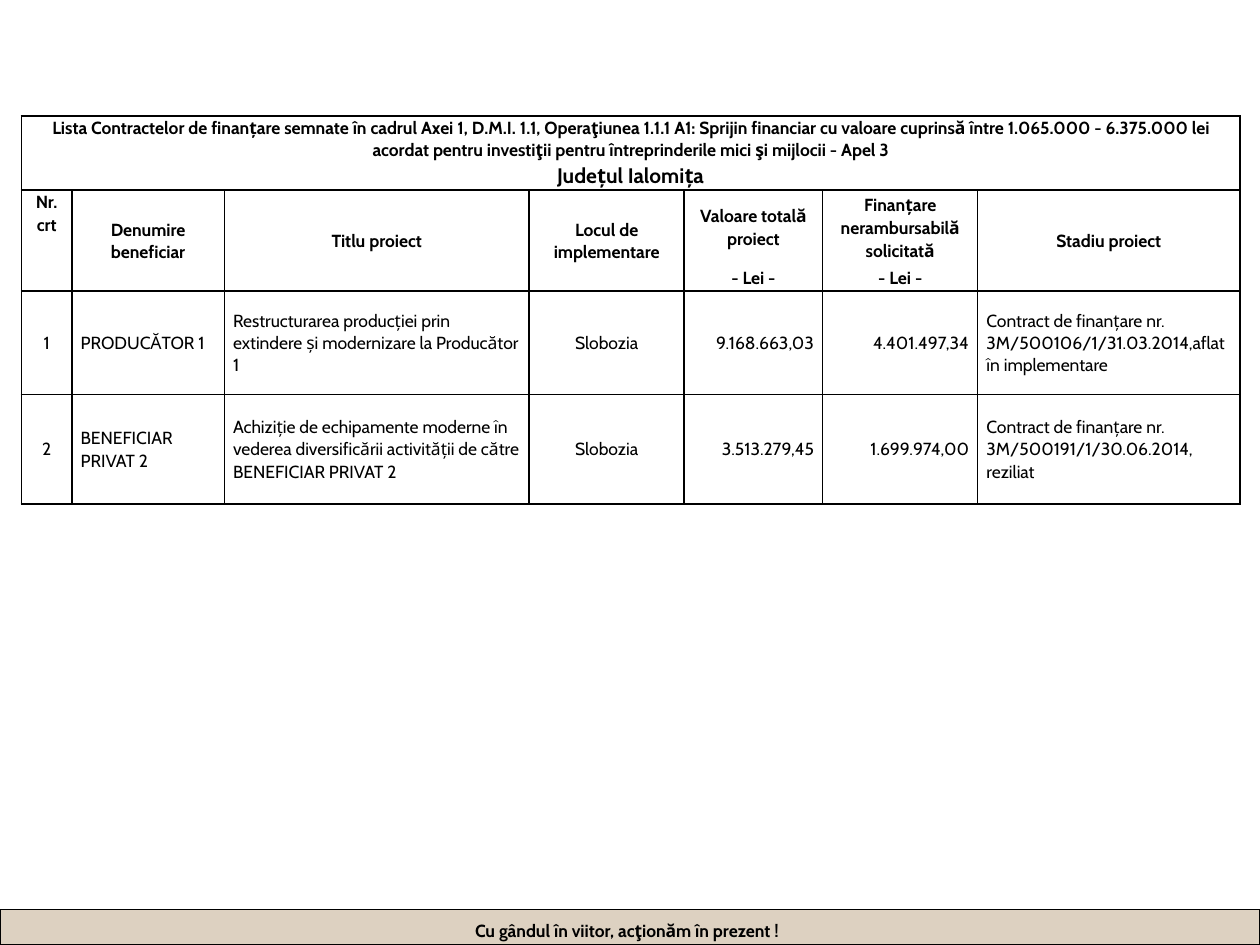
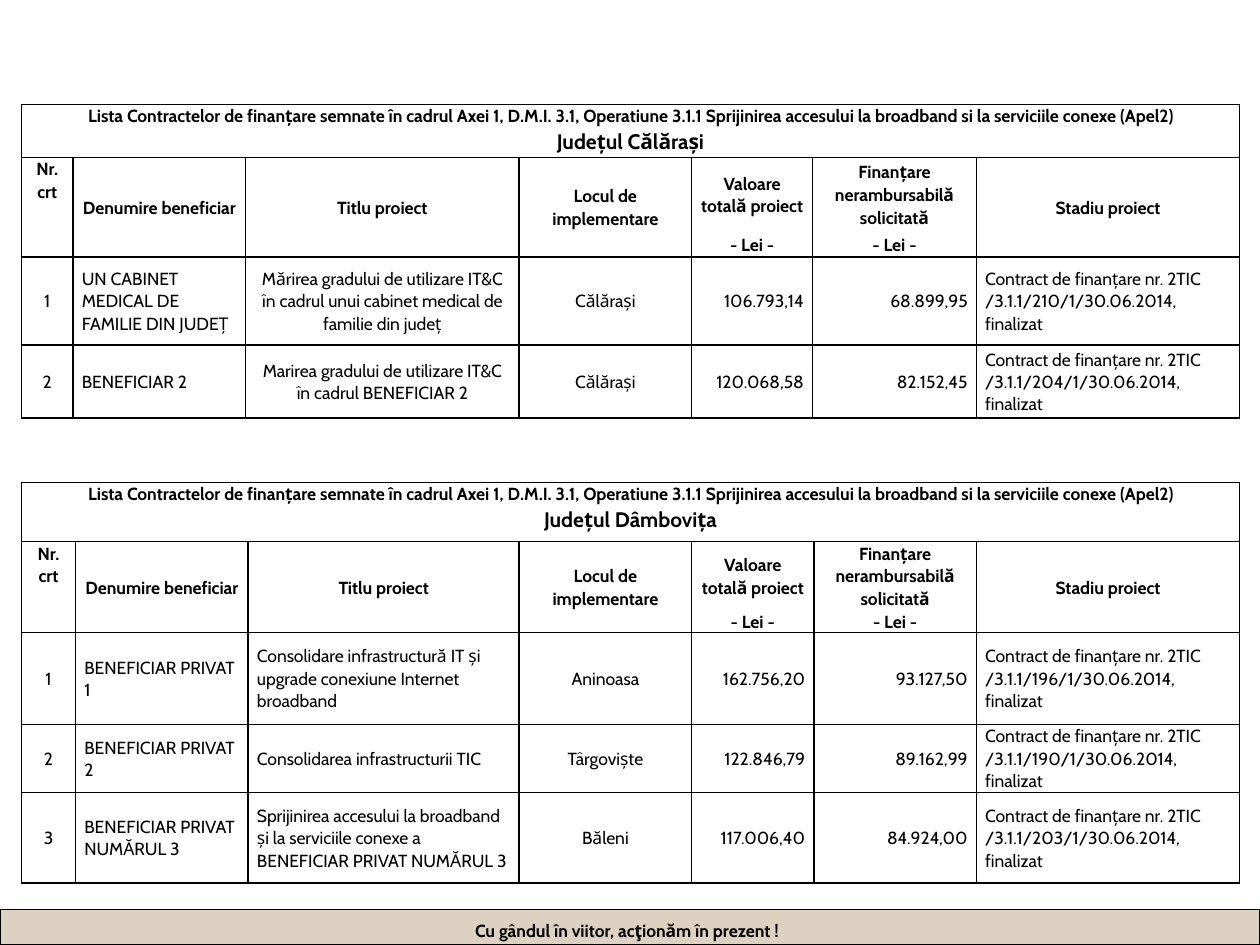
from lxml import etree
from pptx import Presentation
from pptx.dml.color import RGBColor
from pptx.enum import shapes, text
from pptx.oxml import ns
from pptx.util import Inches, Pt

BLACK = RGBColor(0, 0, 0)
WHITE = RGBColor(255, 255, 255)
SAND = RGBColor(0xDD, 0xD1, 0xC1)
FONT = "Cabin"
LEFT, CENTER, RIGHT = text.PP_ALIGN.LEFT, text.PP_ALIGN.CENTER, text.PP_ALIGN.RIGHT
MIDDLE, TOP = text.MSO_ANCHOR.MIDDLE, text.MSO_ANCHOR.TOP


def write(tf, content, size=10, bold=False, align=LEFT, spacing=1.0, new=False):
    p = tf.add_paragraph() if new else tf.paragraphs[0]
    p.alignment = align
    p.line_spacing = spacing
    r = p.add_run()
    r.text = content
    r.font.name, r.font.size, r.font.bold = FONT, Pt(size), bold
    r.font.color.rgb = BLACK


def border(cell, side, visible):
    tcPr = cell._tc.get_or_add_tcPr()
    ln = etree.SubElement(tcPr, ns.qn("a:ln" + side), w=str(Pt(1)))
    if visible:
        fill = etree.SubElement(ln, ns.qn("a:solidFill"))
        etree.SubElement(fill, ns.qn("a:srgbClr"), val=str(BLACK))
    else:
        etree.SubElement(ln, ns.qn("a:noFill"))


# Shared wording
SLOGAN = "Cu gândul în viitor, acţionăm în prezent !"
HEADERS = ["Nr. crt", "Denumire beneficiar", "Titlu proiect", "Locul de implementare",
           "Valoare totală proiect", "Finanțare nerambursabilă solicitată", "Stadiu proiect"]
MONEY_COLS = (4, 5)
LIST_SME = ("Lista Contractelor de finanțare semnate în cadrul Axei 1, D.M.I. 1.1, "
            "Operaţiunea 1.1.1 A1: Sprijin financiar cu valoare cuprinsă între "
            "1.065.000 - 6.375.000 lei acordat pentru investiţii pentru "
            "întreprinderile mici şi mijlocii - Apel 3")
LIST_BROADBAND = ("Lista Contractelor de finanțare semnate în cadrul Axei 1, D.M.I. 3.1, "
                  "Operatiune 3.1.1 Sprijinirea accesului la broadband si la "
                  "serviciile conexe (Apel2)")
CONTRACT = "Contract de finanțare nr. "

# Tables of each slide
ialomita = dict(
    heading=LIST_SME, county="Județul Ialomița", top=0.92, title_align=LEFT,
    widths=[0.4, 1.21, 2.42, 1.23, 1.1, 1.23, 2.08],
    heights=[0.59, 0.59, 0.21, 0.82, 0.87],
    projects=[
        ("PRODUCĂTOR 1",
         "Restructurarea producției prin extindere și modernizare la Producător 1",
         "Slobozia", "9.168.663,03", "4.401.497,34",
         "3M/500106/1/31.03.2014,aflat în implementare"),
        ("BENEFICIAR PRIVAT 2",
         "Achiziție de echipamente moderne în vederea diversificării activității "
         "de către BENEFICIAR PRIVAT 2",
         "Slobozia", "3.513.279,45", "1.699.974,00",
         "3M/500191/1/30.06.2014, reziliat"),
    ])
calarasi = dict(
    heading=LIST_BROADBAND, county="Județul Călărași", top=0.83, title_align=CENTER,
    widths=[0.41, 1.37, 2.17, 1.37, 0.96, 1.3, 2.09],
    heights=[0.42, 0.59, 0.2, 0.7, 0.58],
    projects=[
        ("UN CABINET MEDICAL DE FAMILIE DIN JUDEȚ",
         "Mărirea gradului de utilizare IT&C în cadrul unui cabinet medical "
         "de familie din județ",
         "Călărași", "106.793,14", "68.899,95",
         "2TIC /3.1.1/210/1/30.06.2014, finalizat"),
        ("BENEFICIAR 2",
         "Marirea gradului de utilizare IT&C în cadrul BENEFICIAR 2",
         "Călărași", "120.068,58", "82.152,45",
         "2TIC /3.1.1/204/1/30.06.2014, finalizat"),
    ])
dambovita = dict(
    heading=LIST_BROADBAND, county="Județul Dâmbovița", top=3.83, title_align=LEFT,
    widths=[0.43, 1.37, 2.15, 1.37, 0.97, 1.29, 2.09],
    heights=[0.47, 0.54, 0.18, 0.73, 0.54, 0.72],
    projects=[
        ("BENEFICIAR PRIVAT 1",
         "Consolidare infrastructură IT și upgrade conexiune Internet broadband",
         "Aninoasa", "162.756,20", "93.127,50",
         "2TIC /3.1.1/196/1/30.06.2014, finalizat"),
        ("BENEFICIAR PRIVAT 2", "Consolidarea infrastructurii TIC",
         "Târgoviște", "122.846,79", "89.162,99",
         "2TIC /3.1.1/190/1/30.06.2014, finalizat"),
        ("BENEFICIAR PRIVAT NUMĂRUL 3",
         "Sprijinirea accesului la broadband și la serviciile conexe a "
         "BENEFICIAR PRIVAT NUMĂRUL 3",
         "Băleni", "117.006,40", "84.924,00",
         "2TIC /3.1.1/203/1/30.06.2014, finalizat"),
    ])

prs = Presentation()
prs.slide_width, prs.slide_height = Inches(10), Inches(7.5)

for county_tables in ([ialomita], [calarasi, dambovita]):
    s = prs.slides.add_slide(prs.slide_layouts[6])

    # Footer band
    sp = s.shapes.add_shape(shapes.MSO_SHAPE.RECTANGLE, 0, Inches(7.22),
                            Inches(10), Inches(0.28))
    sp.shadow.inherit = False
    sp.fill.solid()
    sp.fill.fore_color.rgb = SAND
    sp.line.color.rgb = BLACK
    sp.line.width = Pt(0.75)
    tf = sp.text_frame
    tf.word_wrap = False
    tf.vertical_anchor = MIDDLE
    tf.margin_left = tf.margin_bottom = 0
    tf.margin_right = tf.margin_top = Inches(0.05)
    write(tf, SLOGAN, bold=True, align=CENTER)

    for t in county_tables:
        widths, heights = t["widths"], t["heights"]
        frame = s.shapes.add_table(len(heights), len(widths), Inches(0.17), Inches(t["top"]),
                                   Inches(sum(widths)), Inches(sum(heights)))
        table = frame.table
        table.first_row = table.horz_banding = False
        for col, width in zip(table.columns, widths):
            col.width = Inches(width)
        for row, height in zip(table.rows, heights):
            row.height = Inches(height)

        # Cell frames; the amount headings are open towards their unit
        for i, row in enumerate(table.rows):
            for cell in row.cells:
                for side in "LRTB":
                    border(cell, side, (i, side) not in ((1, "B"), (2, "T")))
                cell.fill.solid()
                cell.fill.fore_color.rgb = WHITE
                cell.margin_left = cell.margin_right = Inches(0.07)
                cell.margin_top = cell.margin_bottom = 0
                cell.vertical_anchor = MIDDLE

        # Heading and column titles
        title = table.cell(0, 0)
        title.merge(table.cell(0, len(widths) - 1))
        title.vertical_anchor = TOP
        head = dict(bold=True, align=CENTER, spacing=1.07)
        write(title.text_frame, t["heading"], **head)
        write(title.text_frame, t["county"], size=12, new=True, **head)
        for c, label in enumerate(HEADERS):
            write(table.cell(1, c).text_frame, label, **head)
            if c in MONEY_COLS:
                write(table.cell(2, c).text_frame, "- Lei -", **head)
            else:
                table.cell(1, c).merge(table.cell(2, c))
        table.cell(1, 0).vertical_anchor = TOP

        # Projects
        aligns = [CENTER, LEFT, t["title_align"], CENTER, RIGHT, RIGHT, LEFT]
        for n, (*details, contract) in enumerate(t["projects"], 1):
            values = [str(n), *details, CONTRACT + contract]
            for c, (value, align) in enumerate(zip(values, aligns)):
                write(table.cell(n + 2, c).text_frame, value, align=align, spacing=1.06)

prs.save("out.pptx")
